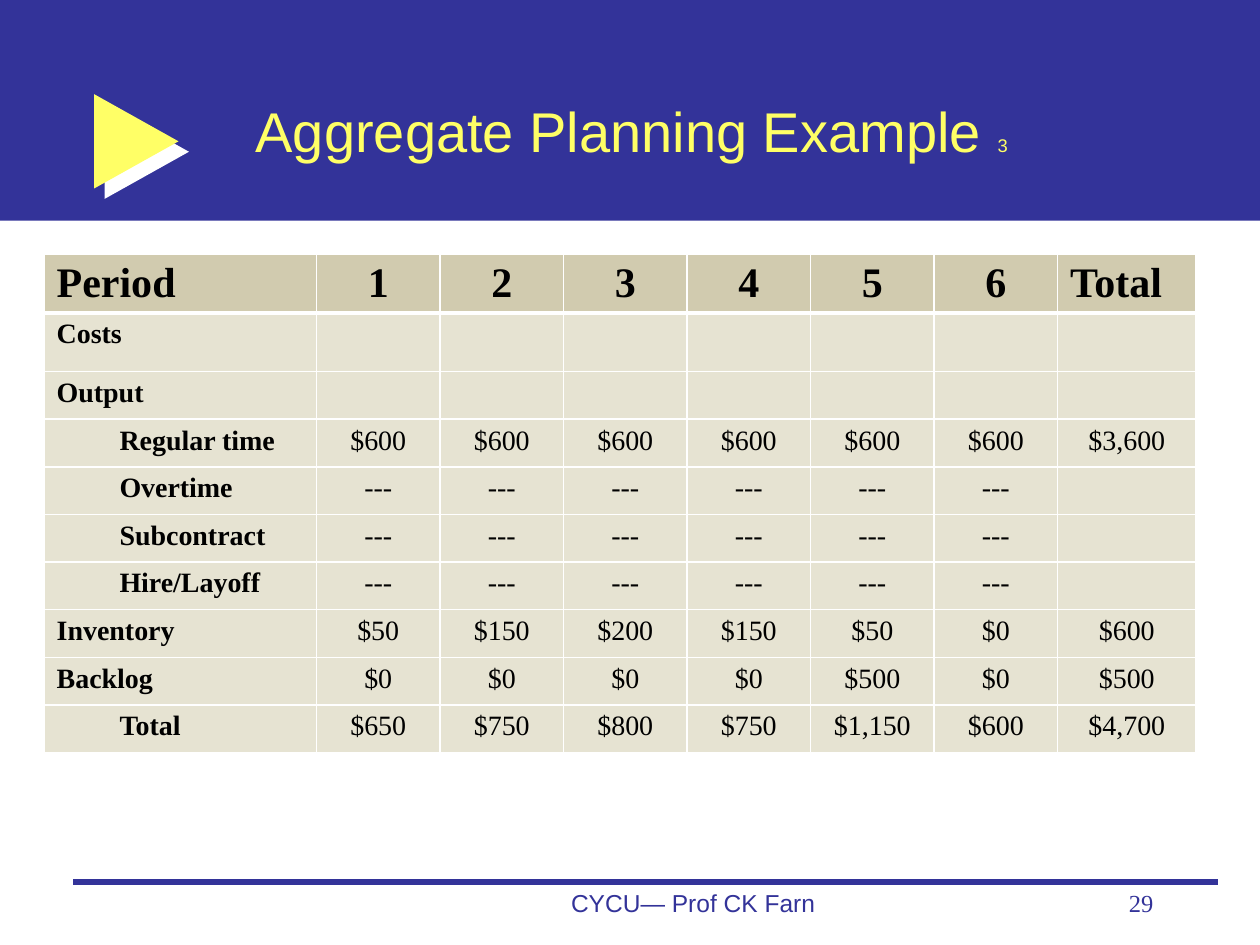
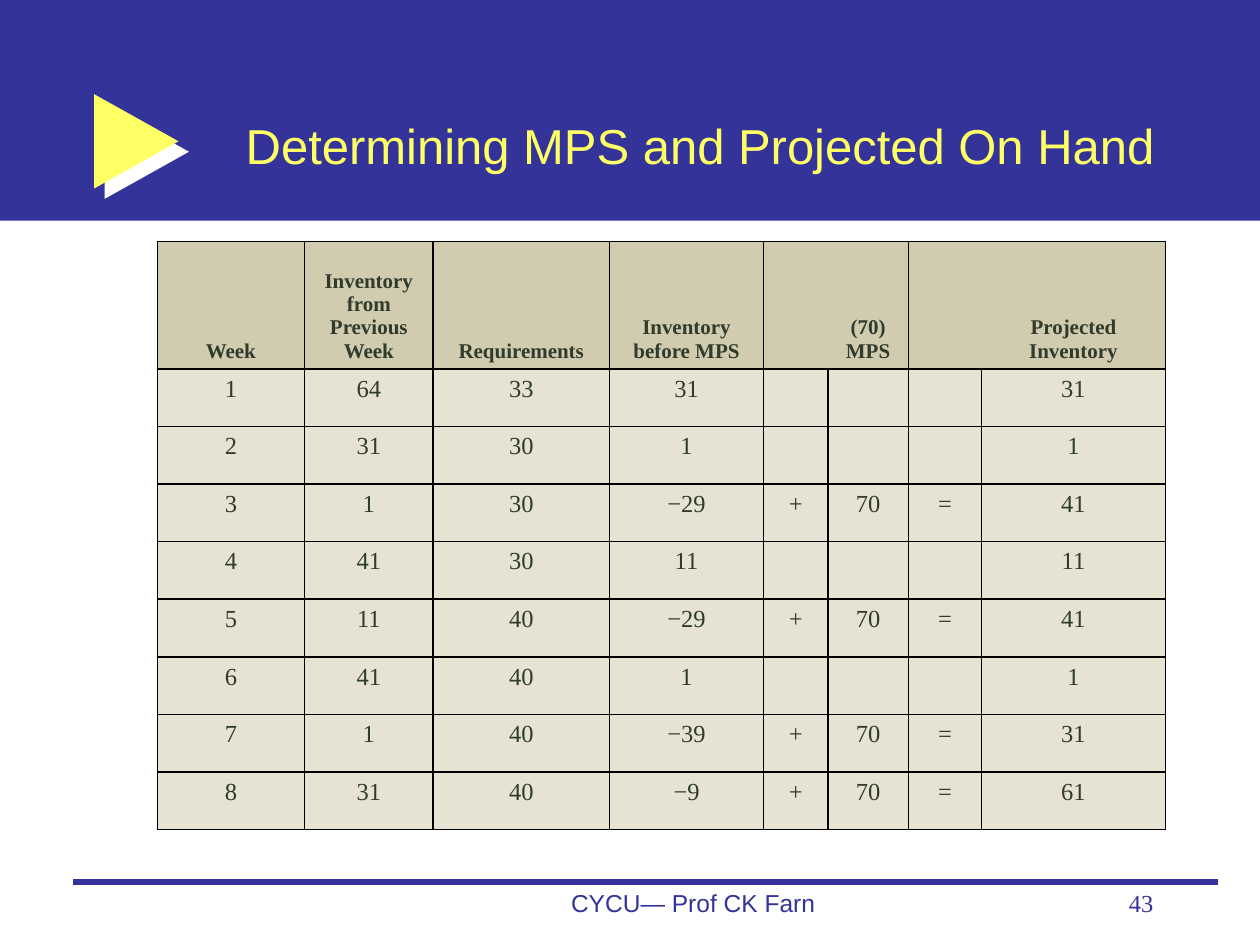
from dataclasses import dataclass

from lxml.etree import SubElement
from pptx import Presentation
from pptx.dml.color import RGBColor
from pptx.enum.shapes import MSO_CONNECTOR, MSO_SHAPE
from pptx.enum.text import MSO_ANCHOR, PP_ALIGN
from pptx.oxml.ns import qn
from pptx.util import Cm, Pt


@dataclass(frozen=True)
class Theme:
    navy: str = "333399"
    yellow: str = "FFFF66"
    white: str = "FFFFFF"
    black: str = "000000"
    moss: str = "303B2C"
    header_fill: str = "D1CBAF"
    body_fill: str = "E6E3D2"
    sans: str = "Arial"
    serif: str = "Times New Roman"
    footer_size: float = 14
    rule: float = 1
    thick_rule: float = 3


THEME = Theme()
FOOTER = "CYCU— Prof CK Farn"
PERIODS = 6
NO_MPS = ["", "", ""]
MPS = ["+", "70", "="]

COSTS = {
    "title": [("Aggregate Planning Example ", 32), ("3", 10.5)],
    "title_box": (4.9, 1.52, 18.6, 2.2),
    "number": "29",
    "table": {
        "corner": (0.89, 5.13),
        "widths": [5.49] + PERIODS * [2.49] + [2.79],
        "heights": 2 * [1.18] + 8 * [0.96],
        "margins": (0.12, 0.06),
        "sizes": (24, 16),
        "ink": THEME.black,
        "rule_color": THEME.white,
        "header_rule": THEME.thick_rule,
        "header_anchor": MSO_ANCHOR.TOP,
        "left_columns": {0},
        "left_headers": {0, 7},
        "bold_labels": True,
        "indented": {"Regular time", "Overtime", "Subcontract", "Hire/Layoff", "Total"},
        "open_columns": set(),
        "rows": [
            ["Period", "1", "2", "3", "4", "5", "6", "Total"],
            ["Costs"],
            ["Output"],
            ["Regular time"] + PERIODS * ["$600"] + ["$3,600"],
            ["Overtime"] + PERIODS * ["---"],
            ["Subcontract"] + PERIODS * ["---"],
            ["Hire/Layoff"] + PERIODS * ["---"],
            ["Inventory", "$50", "$150", "$200", "$150", "$50", "$0", "$600"],
            ["Backlog", "$0", "$0", "$0", "$0", "$500", "$0", "$500"],
            ["Total", "$650", "$750", "$800", "$750", "$1,150", "$600", "$4,700"],
        ],
    },
}

SCHEDULE = {
    "title": [("Determining MPS and Projected On Hand", 28)],
    "title_box": (4.7, 1.73, 19.2, 2.39),
    "number": "43",
    "table": {
        "corner": (3.17, 4.87),
        "widths": [2.97, 2.59, 3.56, 3.1, 1.3, 1.62, 1.48, 3.7],
        "heights": [2.57] + 8 * [1.16],
        "margins": (0.13, 0.13),
        "sizes": (12, 14),
        "ink": THEME.moss,
        "rule_color": THEME.black,
        "header_rule": THEME.rule,
        "header_anchor": MSO_ANCHOR.BOTTOM,
        "left_columns": set(),
        "left_headers": set(),
        "bold_labels": False,
        "indented": set(),
        "open_columns": {4, 6},
        "rows": [
            ["Week", "Inventory from Previous Week", "Requirements",
             "Inventory before MPS", "", "(70)\nMPS", "", "Projected Inventory"],
            ["1", "64", "33", "31", *NO_MPS, "31"],
            ["2", "31", "30", "1", *NO_MPS, "1"],
            ["3", "1", "30", "−29", *MPS, "41"],
            ["4", "41", "30", "11", *NO_MPS, "11"],
            ["5", "11", "40", "−29", *MPS, "41"],
            ["6", "41", "40", "1", *NO_MPS, "1"],
            ["7", "1", "40", "−39", *MPS, "31"],
            ["8", "31", "40", "−9", *MPS, "61"],
        ],
    },
}


def rgb(color):
    return RGBColor.from_string(color)


def set_font(font, name, color, size=None, bold=False):
    font.name, font.bold = name, bold
    font.color.rgb = rgb(color)
    if size:
        font.size = Pt(size)


def add_block(slide, preset, box, color):
    block = slide.shapes.add_shape(preset, *map(Cm, box))
    block.shadow.inherit = False
    block.fill.solid()
    block.fill.fore_color.rgb = rgb(color)
    block.line.fill.background()
    return block


def add_footer_text(slide, text, box, font_name, align):
    frame = slide.shapes.add_textbox(*map(Cm, box)).text_frame
    frame.word_wrap = True
    frame.text = text
    line = frame.paragraphs[0]
    line.alignment = align
    set_font(line.font, font_name, THEME.navy, THEME.footer_size)


def add_frame(slide, number):
    """Add the band, the arrow with its hard shadow, and the footer."""
    add_block(slide, MSO_SHAPE.RECTANGLE, (0, 0, 25.4, 4.45), THEME.navy)
    for offset, color in ((0.21, THEME.white), (0, THEME.yellow)):
        box = (1.9 + offset, 1.9 + offset, 1.7, 1.9)
        arrow = add_block(slide, MSO_SHAPE.RIGHT_ARROW, box, color)
        arrow.adjustments[0], arrow.adjustments[1] = 0.38, 1
    rule = slide.shapes.add_connector(
        MSO_CONNECTOR.STRAIGHT, Cm(1.48), Cm(17.78), Cm(24.55), Cm(17.78))
    rule.line.color.rgb = rgb(THEME.navy)
    rule.line.width = Pt(THEME.thick_rule)
    SubElement(rule.element.spPr, qn("a:effectLst"))
    add_footer_text(slide, FOOTER, (9.95, 17.78, 8.05, 1.27), THEME.sans, PP_ALIGN.CENTER)
    add_footer_text(slide, number, (18.2, 17.78, 5.3, 1.27), THEME.serif, PP_ALIGN.RIGHT)


def set_title(slide, runs, box):
    title = slide.shapes.title
    title.left, title.top, title.width, title.height = map(Cm, box)
    title.element.getparent().append(title.element)  # in front of the band
    frame = title.text_frame
    frame.word_wrap = True
    frame.vertical_anchor = MSO_ANCHOR.MIDDLE
    line = frame.paragraphs[0]
    line.alignment = PP_ALIGN.LEFT
    set_font(line.font, THEME.sans, THEME.yellow)
    for text, size in runs:
        run = line.add_run()
        run.text = text
        run.font.size = Pt(size)


def set_borders(cell, color, widths):
    """Draw the left, right, top and bottom rules; a width of 0 hides one."""
    properties = cell._tc.get_or_add_tcPr()
    for side, width in zip("LRTB", widths):
        border = SubElement(properties, qn(f"a:ln{side}"), w=str(Pt(width)))
        if width:
            fill = SubElement(border, qn("a:solidFill"))
            SubElement(fill, qn("a:srgbClr"), val=color)
        else:
            SubElement(border, qn("a:noFill"))


def border_widths(content, row, column):
    is_header = row == 0
    joined = content["open_columns"] if is_header else set()
    left = 0 if column - 1 in joined else THEME.rule
    right = 0 if column in joined else THEME.rule
    top = content["header_rule"] if row == 1 else THEME.rule
    bottom = content["header_rule"] if is_header else THEME.rule
    return left, right, top, bottom


def fill_cell(cell, content, row, column, text):
    is_header = row == 0
    set_borders(cell, content["rule_color"], border_widths(content, row, column))
    cell.fill.solid()
    cell.fill.fore_color.rgb = rgb(THEME.header_fill if is_header else THEME.body_fill)
    cell.margin_top, cell.margin_bottom = map(Cm, content["margins"])
    cell.vertical_anchor = content["header_anchor"] if is_header else MSO_ANCHOR.TOP
    if column == 0 and text in content["indented"]:
        cell.margin_left = Cm(1.52)
    cell.text = text
    at_left = column in content["left_headers" if is_header else "left_columns"]
    bold = is_header or (column == 0 and content["bold_labels"])
    size = content["sizes"][0 if is_header else 1]
    for line in cell.text_frame.paragraphs:
        line.alignment = PP_ALIGN.LEFT if at_left else PP_ALIGN.CENTER
        set_font(line.font, THEME.serif, content["ink"], size, bold)


def add_data_table(slide, content):
    widths, heights = content["widths"], content["heights"]
    extent = (*content["corner"], sum(widths), sum(heights))
    table = slide.shapes.add_table(len(heights), len(widths), *map(Cm, extent)).table
    table.first_row = table.horz_banding = False
    for column, width in zip(table.columns, widths):
        column.width = Cm(width)
    for row, (height, texts) in enumerate(zip(heights, content["rows"])):
        table.rows[row].height = Cm(height)
        padded = texts + [""] * (len(widths) - len(texts))
        for column, text in enumerate(padded):
            fill_cell(table.cell(row, column), content, row, column, text)


def main():
    deck = Presentation()
    deck.slide_width, deck.slide_height = Cm(25.4), Cm(19.05)
    title_only = deck.slide_layouts[5]
    for content in (COSTS, SCHEDULE):
        slide = deck.slides.add_slide(title_only)
        add_frame(slide, content["number"])
        set_title(slide, content["title"], content["title_box"])
        add_data_table(slide, content["table"])
    deck.save("out.pptx")


if __name__ == "__main__":
    main()
